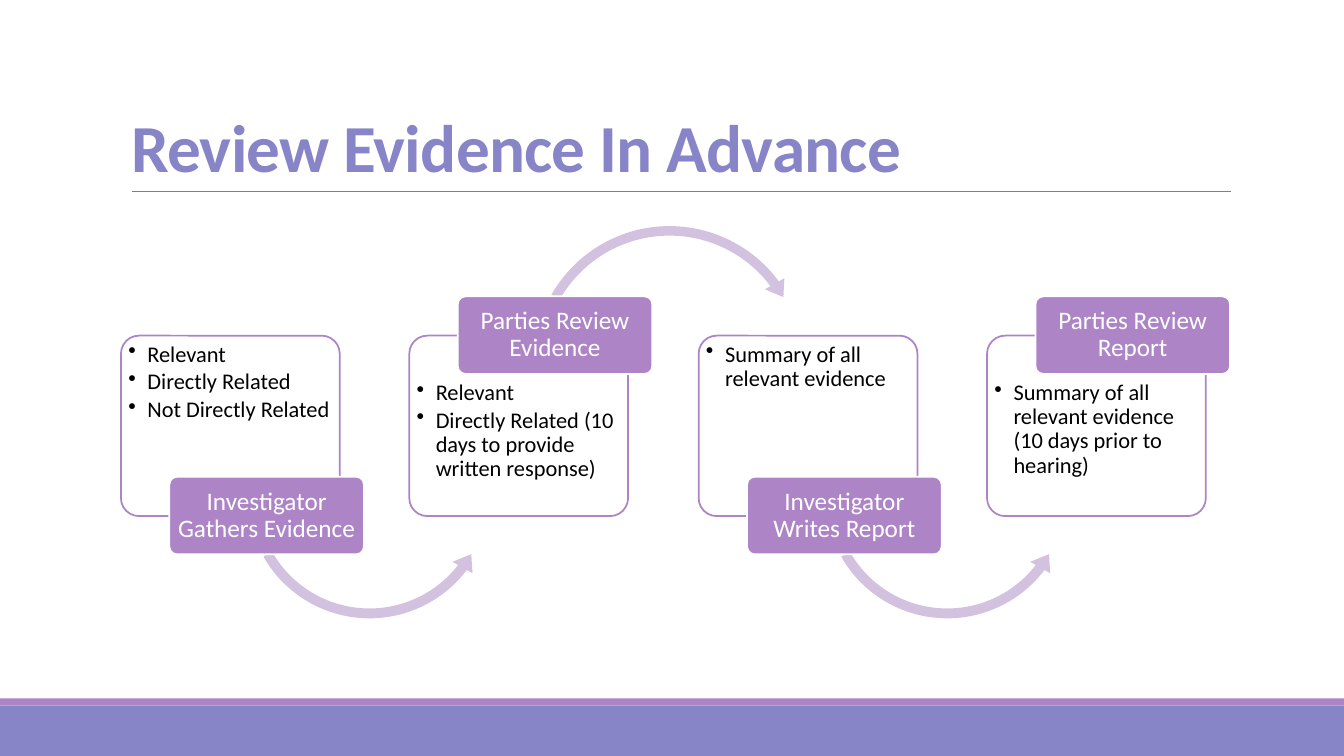
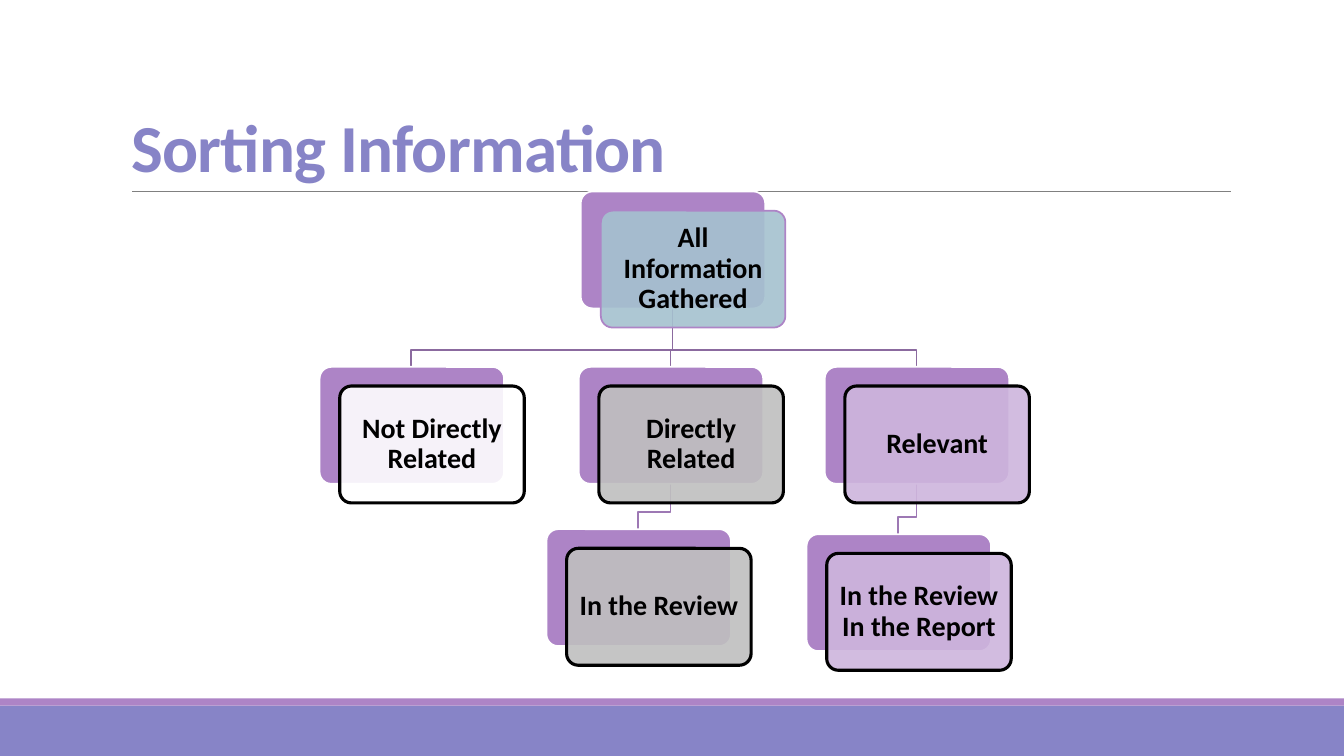
"""Build two slides on reviewing and sorting evidence."""
from dataclasses import dataclass

from lxml import etree
from pptx import Presentation
from pptx.dml.color import RGBColor
from pptx.enum.shapes import MSO_CONNECTOR, MSO_SHAPE
from pptx.enum.text import MSO_ANCHOR, PP_ALIGN
from pptx.oxml.ns import qn
from pptx.util import Pt

PX = 9144
WIDTH, HEIGHT = 1333, 750
TITLE_ONLY = 5
RECT, ROUNDED = MSO_SHAPE.RECTANGLE, MSO_SHAPE.ROUNDED_RECTANGLE
ARC_OVER, ARC_UNDER = MSO_SHAPE.CIRCULAR_ARROW, MSO_SHAPE.LEFT_CIRCULAR_ARROW
STRAIGHT = MSO_CONNECTOR.STRAIGHT
TOP, MIDDLE, BOTTOM = MSO_ANCHOR.TOP, MSO_ANCHOR.MIDDLE, MSO_ANCHOR.BOTTOM
LEFT, CENTER = PP_ALIGN.LEFT, PP_ALIGN.CENTER


@dataclass(frozen=True)
class Theme:
    """Colours, font and sizes of the deck."""
    font: str = "Calibri"
    violet: str = "8784C7"
    purple: str = "AD84C6"
    pale: str = "D3C2DF"
    lilac: str = "CEB5DD"
    blue: str = "A5C1CF"
    gray: str = "BFBFBF"
    rule: str = "808080"
    upper_edge: str = "8B6A9F"
    lower_edge: str = "9D78B4"
    white: str = "FFFFFF"
    black: str = "000000"
    title_size: int = 48
    node_size: int = 20
    label_size: int = 18
    body_size: int = 16
    thin: float = 0.5
    medium: float = 1.25
    thick: float = 2.25


THEME = Theme()


def write(tf, text, *, size, color, bold=False, align=CENTER, anchor=MIDDLE,
          inset=(10, 5, 10, 5), leading=0.9, after=0, bullet=False, tracking=0):
    """Fill a text frame, one paragraph for each line of text."""
    tf.word_wrap = True
    tf.vertical_anchor = anchor
    tf.margin_left, tf.margin_top, tf.margin_right, tf.margin_bottom = (
        v * PX for v in inset)
    for i, line in enumerate(text.split("\n")):
        p = tf.add_paragraph() if i else tf.paragraphs[0]
        if bullet:
            pPr = p._p.get_or_add_pPr()
            pPr.set("marL", str(19 * PX))
            pPr.set("indent", str(-19 * PX))
            etree.SubElement(pPr, qn("a:buChar")).set("char", "•")
        p.alignment = align
        p.line_spacing = leading
        p.space_after = Pt(after)
        r = p.add_run()
        r.text = line
        r.font.name, r.font.size, r.font.bold = THEME.font, Pt(size), bold
        r.font.color.rgb = RGBColor.from_string(color)
        if tracking:
            r._r.get_or_add_rPr().set("spc", str(tracking))


class Deck:
    """Holds the presentation and the slide being drawn."""

    def __init__(self):
        """Start an empty presentation."""
        self.prs = Presentation()
        self.prs.slide_width, self.prs.slide_height = WIDTH * PX, HEIGHT * PX
        self.s = None

    def slide(self, title):
        """Add a slide with its bands, rule and title."""
        self.s = self.prs.slides.add_slide(self.prs.slide_layouts[TITLE_ONLY])
        self.shape(RECT, 0, 700, WIDTH, 50, THEME.violet)
        self.shape(RECT, 0, 693, WIDTH, 7, THEME.purple)
        self.rule(131, 190, 1221)
        sp = self.s.shapes.title
        sp.left, sp.top, sp.width, sp.height = (
            v * PX for v in (120, 31, 1100, 159))
        write(sp.text_frame, title, size=THEME.title_size, color=THEME.violet,
              bold=True, align=LEFT, anchor=BOTTOM, leading=0.85, tracking=-50)

    def rule(self, x1, y, x2):
        """Draw a thin horizontal line."""
        line = self.s.shapes.add_connector(
            STRAIGHT, x1 * PX, y * PX, x2 * PX, y * PX)
        self.outline(line, THEME.rule, THEME.thin)
        etree.SubElement(line._element.spPr, qn("a:effectLst"))

    def outline(self, sp, color, weight):
        """Set the line of a shape."""
        sp.line.color.rgb = RGBColor.from_string(color)
        sp.line.width = Pt(weight)

    def shape(self, kind, x, y, w, h, fill, line=None, weight=THEME.medium,
              opacity=100, adjust=()):
        """Draw a preset shape and return it."""
        sp = self.s.shapes.add_shape(kind, x * PX, y * PX, w * PX, h * PX)
        sp.shadow.inherit = False
        for i, value in enumerate(adjust):
            sp.adjustments[i] = value
        sp.fill.solid()
        sp.fill.fore_color.rgb = RGBColor.from_string(fill)
        if opacity < 100:
            color = sp._element.spPr.find(qn("a:solidFill"))[0]
            etree.SubElement(color, qn("a:alpha")).set("val", str(opacity * 1000))
        if line:
            self.outline(sp, line, weight)
        else:
            sp.line.fill.background()
        return sp

    def rounded(self, x, y, w, h, fill, line, **style):
        """Draw a box with small round corners."""
        return self.shape(ROUNDED, x, y, w, h, fill, line, adjust=(0.1,), **style)

    def card(self, x, y, text, top):
        """Draw a white card with bullets."""
        sp = self.rounded(x, y, 217, 179, THEME.white, THEME.purple, opacity=90)
        write(sp.text_frame, text, size=THEME.body_size, color=THEME.black,
              align=LEFT, anchor=TOP, inset=(2, top, 2, 2), after=2.4, bullet=True)

    def label(self, x, y, text):
        """Draw the purple name of a step."""
        sp = self.rounded(x, y, 193, 77, THEME.purple, THEME.white)
        write(sp.text_frame, text, size=THEME.label_size, color=THEME.white,
              inset=(4, 3, 4, 3))

    def arc(self, kind, x, y, size, adjust):
        """Draw a curved arrow to the next step."""
        self.shape(kind, x, y, size, size, THEME.pale, adjust=adjust)

    def edge(self, parent, child, color):
        """Draw an elbow from the foot of a node to the head of another."""
        x1, y1 = parent[0] + NODE_W // 2, parent[1] + NODE_H
        x2, y2 = child[0] + NODE_W // 2, child[1]
        path = self.s.shapes.build_freeform(x1, y1, scale=PX)
        path.add_line_segments(
            [(x1, y2 - 17), (x2, y2 - 17), (x2, y2)], close=False)
        sp = path.convert_to_shape()
        sp.shadow.inherit = False
        sp.fill.background()
        self.outline(sp, color, THEME.medium)

    def node(self, x, y, text, fill, line, weight):
        """Draw a tree node with its offset backing."""
        self.rounded(x, y, NODE_W, NODE_H, THEME.purple, THEME.white)
        sp = self.rounded(x + 20, y + 19, NODE_W, NODE_H, fill, line,
                          weight=weight, opacity=90)
        write(sp.text_frame, text, size=THEME.node_size, color=THEME.black,
              bold=True, inset=(8, 8, 8, 8))


NODE_W, NODE_H = 183, 116
UNDER = (0.0385, 4.697, 22.452, 90.245, 0.0449)
OVER = (0.0336, 4.199, 194.046, 125.755, 0.0392)
STEPS = [
    ("Investigator Gathers Evidence",
     "Relevant\nDirectly Related\nNot Directly Related"),
    ("Parties Review Evidence",
     "Relevant\nDirectly Related (10 days to provide written response)"),
    ("Investigator Writes Report", "Summary of all relevant evidence"),
    ("Parties Review Report",
     "Summary of all relevant evidence (10 days prior to hearing)"),
]
ROOT = (576, 190)
NODES = [
    ((317, 364), ROOT, "Not Directly Related", THEME.white),
    ((574, 364), ROOT, "Directly Related", THEME.gray),
    ((818, 364), ROOT, "Relevant", THEME.lilac),
    ((542, 525), (574, 364), "In the Review", THEME.gray),
    ((800, 530), (818, 364), "In the Review In the Report", THEME.lilac),
]


def draw_steps(deck):
    """Draw the four steps of the evidence review."""
    deck.slide("Review Evidence In Advance")
    for i, (name, text) in enumerate(STEPS):
        x, raised = 120 + i * 573 // 2, i % 2 == 1
        deck.card(x, 333, text, 40 if raised else 2)
        if i < len(STEPS) - 1:
            if raised:
                deck.arc(ARC_OVER, x + 117, 218, 282, OVER)
            else:
                deck.arc(ARC_UNDER, x + 119, 365, 255, UNDER)
        deck.label(x + 48, 294 if raised else 473, name)


def draw_tree(deck):
    """Draw the tree of gathered information."""
    deck.slide("Sorting Information")
    for place, parent, _, _ in NODES:
        deck.edge(parent, place,
                  THEME.upper_edge if parent == ROOT else THEME.lower_edge)
    deck.node(*ROOT, "All Information Gathered", THEME.blue, THEME.purple,
              THEME.medium)
    for place, _, text, fill in NODES:
        deck.node(*place, text, fill, THEME.black, THEME.thick)


def main():
    """Draw both slides and save them."""
    deck = Deck()
    draw_steps(deck)
    draw_tree(deck)
    deck.prs.save("out.pptx")


if __name__ == "__main__":
    main()
